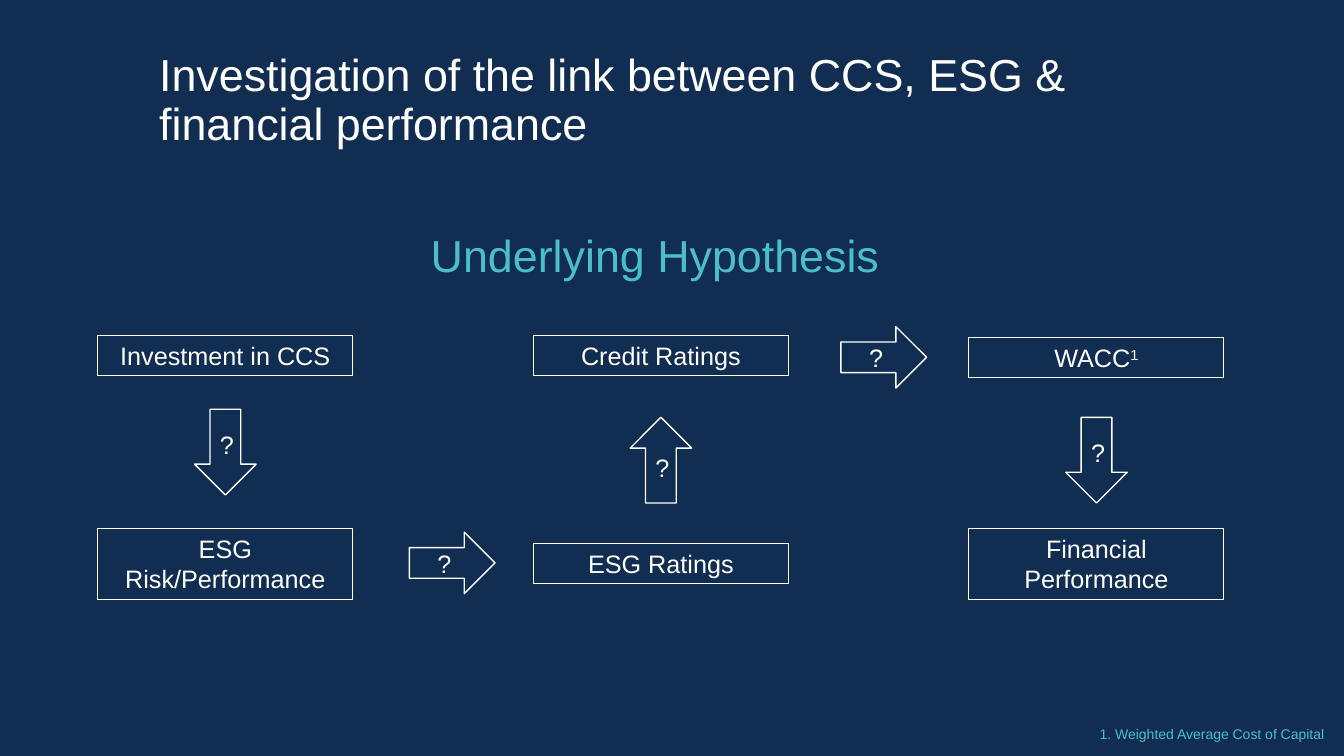
"""Build the slide on the hypothesis linking CCS, ESG and financial performance."""
from pptx import Presentation
from pptx.dml.color import RGBColor
from pptx.enum.shapes import MSO_SHAPE as Shape
from pptx.enum.text import MSO_ANCHOR as Anchor, MSO_AUTO_SIZE as AutoSize, PP_ALIGN as Align
from pptx.util import Inches, Pt

NAVY = RGBColor(0x12, 0x2D, 0x52)
TEAL = RGBColor(0x4B, 0xBE, 0xC7)
WHITE = RGBColor(0xFF, 0xFF, 0xFF)

TITLE = "Investigation of the link between CCS, ESG & financial performance"
HEADING = "Underlying Hypothesis "
FOOTNOTE = "1. Weighted Average Cost of Capital"

# column, top, height, label, superscript
STEPS = [
    (0, 5.24, 0.71, "ESG Risk/Performance", ""),
    (0, 3.33, 0.4, "Investment in CCS", ""),
    (1, 5.39, 0.4, "ESG Ratings", ""),
    (1, 3.33, 0.4, "Credit Ratings", ""),
    (2, 3.35, 0.4, "WACC", "1"),
    (2, 5.24, 0.71, "Financial Performance", ""),
]
# left, top, rotation, text direction
ARROWS = [
    (4.06, 5.28, 0, "horz"),
    (8.34, 3.24, 0, "horz"),
    (1.81, 4.18, 90, "vert270"),
    (6.13, 4.26, 270, "vert"),
    (10.45, 4.26, 90, "vert270"),
]
FIRST_LEFT, COLUMN_STEP, STEP_WIDTH = 0.97, 4.32, 2.53
ARROW_SIZE = (0.85, 0.61)


def write(box, text, size, color, align, raised="", spacing=None, **frame_format):
    frame = box.text_frame
    for name, value in {"word_wrap": True, **frame_format}.items():
        setattr(frame, name, value)
    para = frame.paragraphs[0]
    para.alignment = align
    if spacing:
        para.line_spacing = spacing
    for part in filter(None, (text, raised)):
        span = para.add_run()
        span.text = part
        for name, value in {"name": "Arial", "size": Pt(size)}.items():
            setattr(span.font, name, value)
        span.font.color.rgb = color
    if raised:
        span.font._element.set("baseline", "30000")


def add_text(page, area, *content, **options):
    write(page.shapes.add_textbox(*map(Inches, area)), *content, **options)


def add_outline(page, kind, area, line_width):
    box = page.shapes.add_shape(kind, *map(Inches, area))
    box.shadow.inherit = False
    box.fill.background()
    box.line.color.rgb = WHITE
    box.line.width = Pt(line_width)
    return box


def main():
    deck = Presentation()
    deck.slide_width, deck.slide_height = Inches(13.33), Inches(7.5)
    page = deck.slides.add_slide(deck.slide_layouts[6])
    page.background.fill.solid()
    page.background.fill.fore_color.rgb = NAVY

    grow = {"auto_size": AutoSize.SHAPE_TO_FIT_TEXT}
    add_text(page, (1.48, 0.59, 10.85, 0.83), TITLE, 32, WHITE, Align.LEFT,
             spacing=0.9, vertical_anchor=Anchor.MIDDLE)
    add_text(page, (1.23, 2.21, 10.66, 0.64), HEADING, 32, TEAL, Align.CENTER, **grow)

    for column, top, height, label, raised in STEPS:
        left = FIRST_LEFT + column * COLUMN_STEP
        box = add_outline(page, Shape.RECTANGLE, (left, top, STEP_WIDTH, height), 0.75)
        write(box, label, 18, WHITE, Align.CENTER, raised,
              vertical_anchor=Anchor.TOP, **grow)

    for left, top, rotation, direction in ARROWS:
        arrow = add_outline(page, Shape.RIGHT_ARROW, (left, top, *ARROW_SIZE), 1)
        arrow.rotation = rotation
        write(arrow, "?", 18, WHITE, Align.CENTER, vertical_anchor=Anchor.MIDDLE)
        arrow.text_frame._txBody.bodyPr.set("vert", direction)

    add_text(page, (9.02, 7.15, 4.21, 0.27), FOOTNOTE, 10, TEAL, Align.RIGHT, **grow)
    deck.save("out.pptx")


if __name__ == "__main__":
    main()
